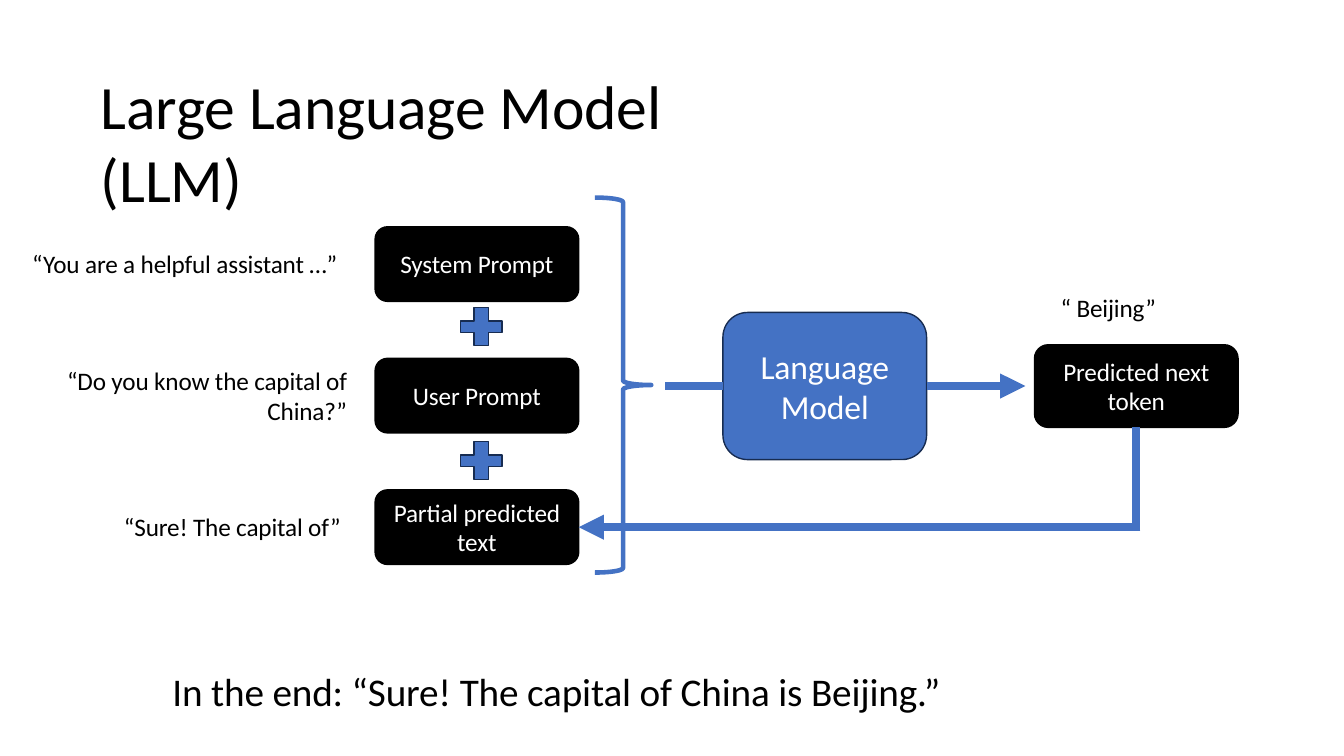
import pptx
import pptx.util
import pptx.dml.color
import pptx.enum.shapes
import pptx.enum.text
from lxml import etree

Inches, Pt = pptx.util.Inches, pptx.util.Pt
Kind = pptx.enum.shapes.MSO_SHAPE
Align = pptx.enum.text.PP_ALIGN
Anchor = pptx.enum.text.MSO_ANCHOR

# Content
TITLE = "Large Language Model (LLM)"
# prompt, its example, left and width of the example, alignment
ROWS = [
    ("System Prompt", "“You are a helpful assistant …”", 0.32, 3.2, Align.LEFT),
    ("User Prompt", "“Do you know the capital of China?”", 0.59, 2.85, Align.RIGHT),
    ("Partial predicted text", "“Sure! The capital of”", 1.23, 2.3, Align.LEFT),
]
MODEL = "Language Model"
TOKEN = "Predicted next token"
ANSWER = "“ Beijing”"
RESULT = "In the end: “Sure! The capital of China is Beijing.”"

THEME = {
    "font": "Calibri", "ink": "000000", "paper": "FFFFFF",
    "blue": "4472C4", "edge": "172C51",
    "title": 44, "result": 28, "model": 24, "body": 18,
    "thin": 1, "brace": 3.25, "arrow": 6,
}

# Layout
ROW_X, ROW_Y, STEP = 3.72, 2.62, 1.305
BOX_W, BOX_H = 2.02, 0.74
PLUS_W, PLUS_H, PLUS_Y = 0.41, 0.38, (3.24, 4.57)
AXIS = 3.83
MODEL_X, MODEL_H = 7.17, 1.46
TOKEN_X, TOKEN_H = 10.26, 0.82

deck = pptx.Presentation()
deck.slide_width, deck.slide_height = Inches(13.33), Inches(7.5)
slide = deck.slides.add_slide(deck.slide_layouts[6])
shapes = slide.shapes


def color(name):
    return pptx.dml.color.RGBColor.from_string(THEME[name])


def write(shape, text, size, ink, align, anchor=Anchor.MIDDLE, pad=0):
    frame = shape.text_frame
    frame.word_wrap = True
    frame.vertical_anchor = anchor
    frame.margin_left = frame.margin_right = Inches(pad)
    frame.margin_top = frame.margin_bottom = 0
    para = frame.paragraphs[0]
    para.alignment = align
    if size == "body":
        para.line_spacing = Pt(21)
    run = para.add_run()
    run.text = text
    run.font.name = THEME["font"]
    run.font.size = Pt(THEME[size])
    run.font.color.rgb = color(ink)
    run.font._element.set("spc", "-10")


def label(text, x, mid, w, h, size="body", align=Align.LEFT, anchor=Anchor.MIDDLE):
    box = shapes.add_textbox(Inches(x), Inches(mid - h / 2), Inches(w), Inches(h))
    write(box, text, size, "ink", align, anchor)


def draw(kind, x, mid, w, h, fill, line, width="thin"):
    shape = shapes.add_shape(kind, Inches(x), Inches(mid - h / 2), Inches(w), Inches(h))
    shape.shadow.inherit = False
    if fill:
        shape.fill.solid()
        shape.fill.fore_color.rgb = color(fill)
    else:
        shape.fill.background()
    shape.line.color.rgb = color(line)
    shape.line.width = Pt(THEME[width])
    return shape


def node(text, x, mid, h, fill="ink", line="ink", size="body"):
    box = draw(Kind.ROUNDED_RECTANGLE, x, mid, BOX_W, h, fill, line)
    write(box, text, size, "paper", Align.CENTER, pad=0.1)
    return box


def link(x1, y1, x2, y2, start=None, end=None, head=False):
    line = shapes.add_connector(pptx.enum.shapes.MSO_CONNECTOR.STRAIGHT,
                                Inches(x1), Inches(y1), Inches(x2), Inches(y2))
    if start:
        line.begin_connect(*start)
    if end:
        line.end_connect(*end)
    line.line.color.rgb = color("blue")
    line.line.width = Pt(THEME["arrow"])
    space = pptx.oxml.ns.qn
    if head:
        etree.SubElement(line.line._get_or_add_ln(), space("a:tailEnd"), type="triangle")
    etree.SubElement(line._element.spPr, space("a:effectLst"))


# Title
label(TITLE, 1, 1.42, 7, 1.5, "title", anchor=Anchor.TOP)

# Prompts with their examples
boxes = []
for i, (name, sample, x, w, align) in enumerate(ROWS):
    mid = ROW_Y + i * STEP
    boxes.append(node(name, ROW_X, mid, BOX_H))
    label(sample, x, mid, w, 0.62, align=align)

# Plus signs
for mid in PLUS_Y:
    plus = draw(Kind.CROSS, ROW_X + 0.85, mid, PLUS_W, PLUS_H, "blue", "edge")
    plus.adjustments[0] = 0.35

# Brace
brace = draw(Kind.RIGHT_BRACE, 5.9, 3.82, 0.56, 3.72, None, "blue", "brace")
brace.adjustments[0], brace.adjustments[1] = 0.08, 0.5

# Model and predicted token
model = node(MODEL, MODEL_X, AXIS, MODEL_H, "blue", "edge", "model")
token = node(TOKEN, TOKEN_X, AXIS, TOKEN_H)
label(ANSWER, 10.52, 3.05, 1.57, 0.33)
link(6.6, AXIS, MODEL_X, AXIS, end=(model, 1))
link(MODEL_X + BOX_W, AXIS, 10.17, AXIS, start=(model, 3), head=True)

# Feedback to the partial text
turn, back = TOKEN_X + BOX_W / 2, ROW_Y + 2 * STEP
link(turn, AXIS + TOKEN_H / 2, turn, back, start=(token, 2))
link(turn + 0.04, back, ROW_X + BOX_W, back, end=(boxes[2], 3), head=True)

# Result
label(RESULT, 1.71, 6.85, 9.7, 0.49, "result")

deck.save("out.pptx")
